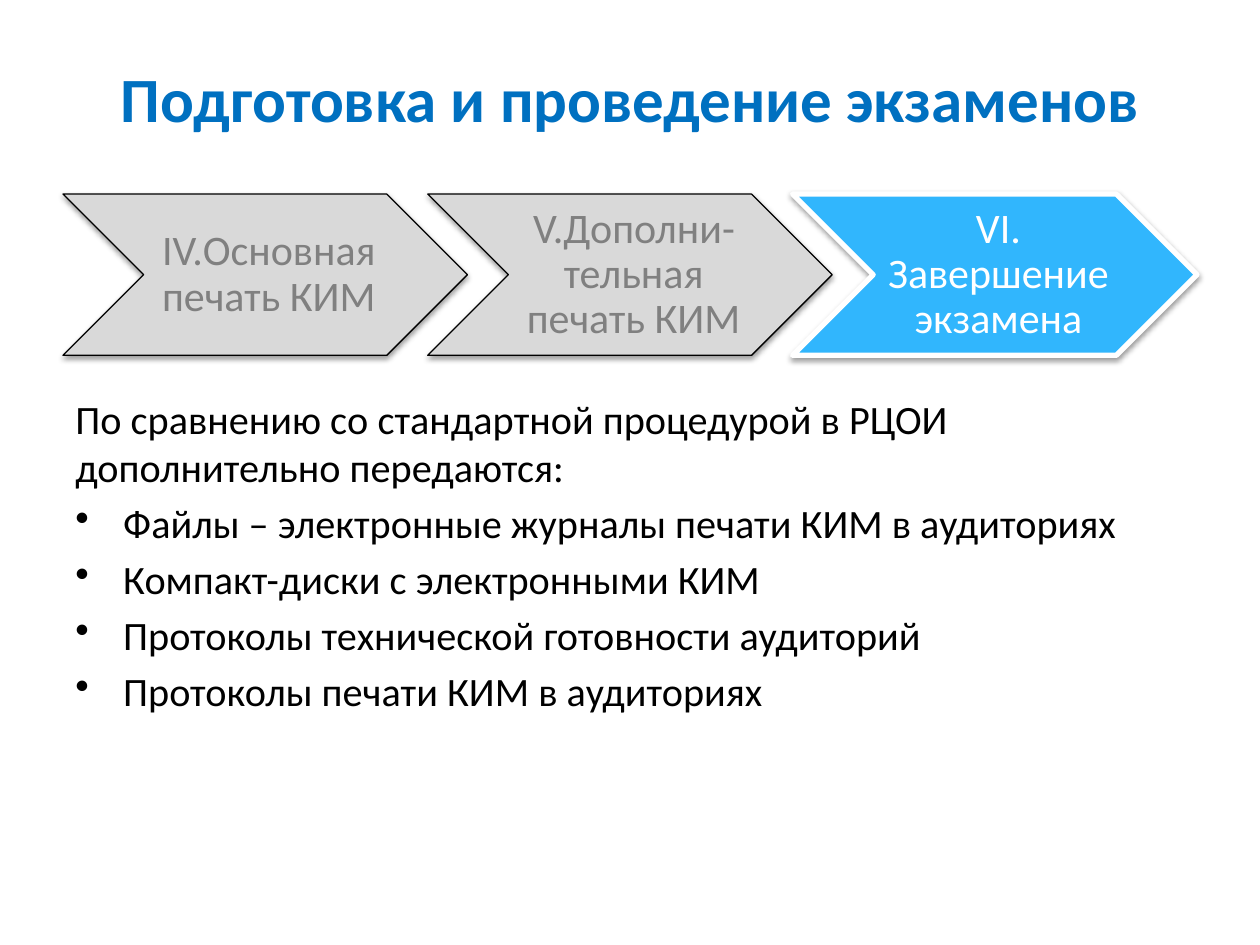
import pptx
import pptx.util
import pptx.dml.color
import pptx.enum.shapes
import pptx.enum.text
import pptx.oxml
import pptx.oxml.ns

Inches, Pt = pptx.util.Inches, pptx.util.Pt
RGB = pptx.dml.color.RGBColor
ALIGN = pptx.enum.text.PP_ALIGN
ANCHOR = pptx.enum.text.MSO_ANCHOR

BLUE, SKY = RGB(0x00, 0x70, 0xC0), RGB(0x31, 0xB6, 0xFD)
SILVER, GRAY = RGB(0xD9, 0xD9, 0xD9), RGB(0x80, 0x80, 0x80)
BLACK, WHITE = RGB(0, 0, 0), RGB(255, 255, 255)

TITLE = "Подготовка и проведение экзаменов"
PAST = {"fill": SILVER, "line": BLACK, "width": 0.75, "text": GRAY}
NOW = {"fill": SKY, "line": WHITE, "width": 3, "text": WHITE}
STEPS = [
    ("IV.Основная печать КИМ", PAST),
    ("V.Дополни-тельная печать КИМ", PAST),
    ("VI. Завершение экзамена", NOW),
]
INTRO = "По сравнению со стандартной процедурой в РЦОИ дополнительно передаются:"
ITEMS = [
    "Файлы – электронные журналы печати КИМ в аудиториях",
    "Компакт-диски с электронными КИМ",
    "Протоколы технической готовности аудиторий",
    "Протоколы печати КИМ в аудиториях",
]

WIDE, HIGH = 10, 7.5
EDGE = WIDE * 0.05
SPAN = WIDE - 2 * EDGE
STEP_W, STEP_H, STEP_TOP = 3.21, 1.28, 1.54
PITCH = (SPAN - STEP_W) / (len(STEPS) - 1)

SHADOW = (
    f'<a:effectLst {pptx.oxml.ns.nsdecls("a")}>'
    '<a:outerShdw blurRad="40000" dist="20000" dir="5400000" rotWithShape="0">'
    '<a:srgbClr val="000000"><a:alpha val="38000"/></a:srgbClr>'
    '</a:outerShdw></a:effectLst>'
)
BULLET = f'<a:buChar {pptx.oxml.ns.nsdecls("a")} char="•"/>'


def style(target, values):
    for name, value in values.items():
        setattr(target, name, value)


def write(para, text, size, color, bold=False):
    run = para.add_run()
    run.text = text
    style(run.font, {"name": "Calibri", "size": Pt(size), "bold": bold})
    run.font.color.rgb = color


def place(left, top, width, height):
    return [Inches(n) for n in (left, top, width, height)]


def add_title(slide):
    title = slide.shapes.title
    spots = place(EDGE, 0.25, SPAN, 1.05)
    style(title, dict(zip(("left", "top", "width", "height"), spots)))
    title.text_frame.vertical_anchor = ANCHOR.MIDDLE
    para = title.text_frame.paragraphs[0]
    para.alignment = ALIGN.CENTER
    write(para, TITLE, 36, BLUE, True)


def add_step(slide, col, text, look):
    step = slide.shapes.add_shape(
        pptx.enum.shapes.MSO_SHAPE.CHEVRON,
        *place(EDGE + col * PITCH, STEP_TOP, STEP_W, STEP_H))
    step.fill.solid()
    step.fill.fore_color.rgb = look["fill"]
    step.line.color.rgb = look["line"]
    step.line.width = Pt(look["width"])
    step._element.spPr.append(pptx.oxml.parse_xml(SHADOW))
    frame = step.text_frame
    pad = Inches(0.04)
    style(frame, {
        "word_wrap": True, "vertical_anchor": ANCHOR.MIDDLE,
        "margin_left": Inches(0.1), "margin_right": pad,
        "margin_top": pad, "margin_bottom": pad})
    para = frame.paragraphs[0]
    style(para, {"alignment": ALIGN.CENTER, "line_spacing": 0.9})
    write(para, text, 24, look["text"])


def add_body(slide):
    box = slide.shapes.add_textbox(*place(EDGE, 3.08, SPAN, 3.58))
    frame = box.text_frame
    frame.word_wrap = True
    write(frame.paragraphs[0], INTRO, 23, BLACK)
    for item in ITEMS:
        para = frame.add_paragraph()
        para.space_before = Pt(4.4)
        props = para._p.get_or_add_pPr()
        props.set("marL", str(Inches(0.38)))
        props.set("indent", str(-Inches(0.38)))
        props.append(pptx.oxml.parse_xml(BULLET))
        write(para, item, 23, BLACK)


def main():
    deck = pptx.Presentation()
    style(deck, {"slide_width": Inches(WIDE), "slide_height": Inches(HIGH)})
    slide = deck.slides.add_slide(deck.slide_layouts[5])
    add_title(slide)
    add_body(slide)
    for col, (text, look) in enumerate(STEPS):
        add_step(slide, col, text, look)
    deck.save("out.pptx")


if __name__ == "__main__":
    main()
